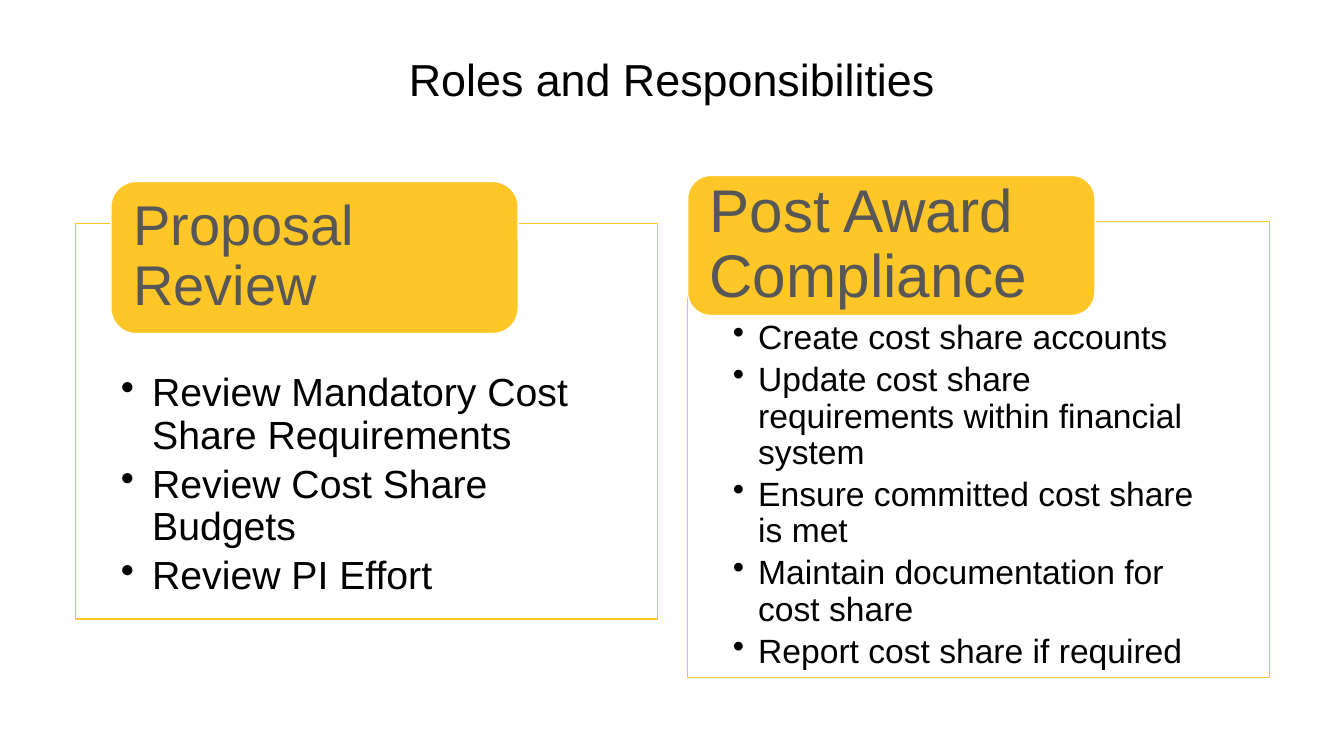
from lxml.etree import SubElement
from pptx import Presentation
from pptx.dml.color import RGBColor
from pptx.enum.shapes import MSO_SHAPE as Shape
from pptx.enum.text import MSO_ANCHOR as Anchor, PP_ALIGN as Align
from pptx.oxml.ns import qn
from pptx.util import Inches, Pt

GOLD, WHITE, GRAY, BLACK = "FFC627", "FFFFFF", "575757", "000000"


def paint(color_format, color):
    color_format.rgb = RGBColor.from_string(color)


def add_text(para, text, size, color):
    para.line_spacing = 0.9
    span = para.add_run()
    span.text = text
    span.font.name = "Arial"
    span.font.size = Pt(size)
    paint(span.font.color, color)


deck = Presentation()
deck.slide_width, deck.slide_height = Inches(13.33), Inches(7.5)
page = deck.slides.add_slide(deck.slide_layouts[6])

title = page.shapes.add_textbox(Inches(0.75), Inches(0.52), Inches(11.83), Inches(1.22))
title.text_frame.word_wrap = True
title_para = title.text_frame.paragraphs[0]
title_para.alignment = Align.CENTER
add_text(title_para, "Roles and Responsibilities", 32, BLACK)

roles = [
    {
        "heading": "Post Award Compliance", "heading_size": 43,
        "header": (6.82, 1.74, 4.04, 1.39), "panel": (6.82, 2.2, 5.77, 4.52),
        "top_inset": 0.98, "size": 24, "indent": 0.25,
        "duties": [
            "Create cost share accounts",
            "Update cost share requirements within financial system",
            "Ensure committed cost share is met",
            "Maintain documentation for cost share",
            "Report cost share if required",
        ],
    },
    {
        "heading": "Proposal Review", "heading_size": 40,
        "header": (1.1, 1.8, 4.04, 1.51), "panel": (0.75, 2.22, 5.77, 3.92),
        "top_inset": 1.48, "size": 28, "indent": 0.31,
        "duties": [
            "Review Mandatory Cost Share Requirements",
            "Review Cost Share Budgets",
            "Review PI Effort",
        ],
    },
]

for role in roles:
    panel = page.shapes.add_shape(Shape.RECTANGLE, *map(Inches, role["panel"]))
    header = page.shapes.add_shape(Shape.ROUNDED_RECTANGLE, *map(Inches, role["header"]))
    for box, fill, line, side, top, bottom, anchor in (
        (panel, WHITE, GOLD, 0.45, role["top_inset"], 0.2, Anchor.TOP),
        (header, GOLD, WHITE, 0.15, 0, 0, Anchor.MIDDLE),
    ):
        box.shadow.inherit = False
        box.fill.solid()
        paint(box.fill.fore_color, fill)
        paint(box.line.color, line)
        box.line.width = Pt(1)
        frame = box.text_frame
        frame.word_wrap = True
        frame.vertical_anchor = anchor
        frame.margin_left = frame.margin_right = Inches(side)
        frame.margin_top, frame.margin_bottom = Inches(top), Inches(bottom)

    panel_color = panel.fill._xPr.find(qn("a:solidFill"))[0]
    SubElement(panel_color, qn("a:alpha")).set("val", "90000")

    heading = header.text_frame.paragraphs[0]
    heading.alignment = Align.LEFT
    add_text(heading, role["heading"], role["heading_size"], GRAY)

    for index, duty in enumerate(role["duties"]):
        frame = panel.text_frame
        para = frame.paragraphs[0] if index == 0 else frame.add_paragraph()
        para.level = 1
        para.alignment = Align.LEFT
        para.space_after = Pt(round(role["size"] * 0.175, 1))
        properties = para._p.get_or_add_pPr()
        properties.set("marL", str(Inches(role["indent"])))
        properties.set("indent", str(-Inches(role["indent"])))
        SubElement(properties, qn("a:buChar")).set("char", "•")
        add_text(para, duty, role["size"], BLACK)

deck.save("out.pptx")
